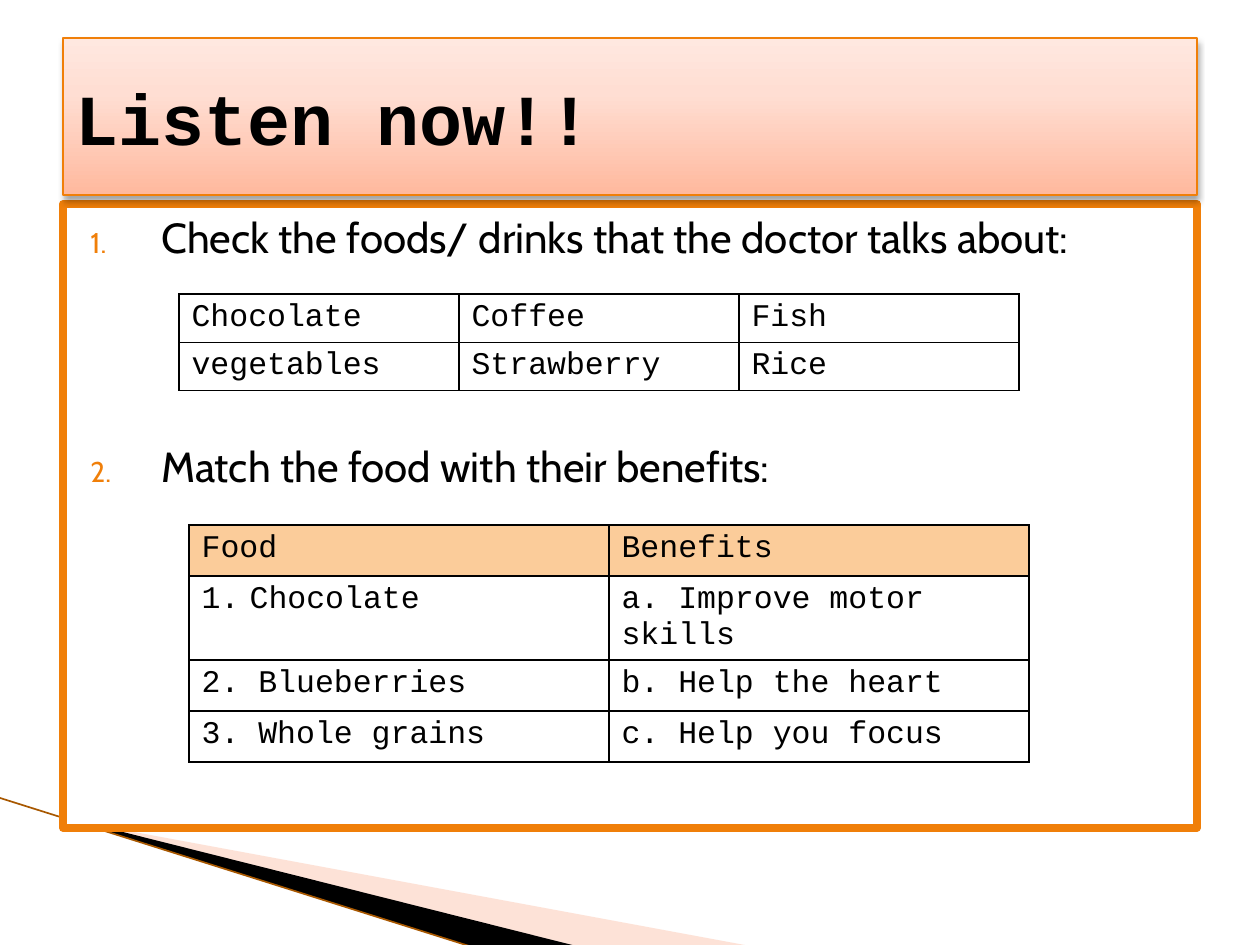
from lxml import etree
from pptx import Presentation
from pptx.dml.color import RGBColor
from pptx.enum.shapes import MSO_CONNECTOR, MSO_SHAPE
from pptx.enum.text import MSO_ANCHOR, PP_ALIGN
from pptx.oxml import parse_xml
from pptx.oxml.ns import nsdecls, qn
from pptx.util import Pt

PX = 914400 // 126  # EMU in one px
BLACK = RGBColor(0x00, 0x00, 0x00)
WHITE = RGBColor(0xFF, 0xFF, 0xFF)
ORANGE = RGBColor(0xF0, 0x7F, 0x09)
BROWN = RGBColor(0xA8, 0x58, 0x00)
PEACH = RGBColor(0xFC, 0xB7, 0x9B)
HEADER = RGBColor(0xFB, 0xCC, 0x9A)
GRADIENT = [(0, "FFB99E"), (65, "FFDED3"), (100, "FFE8E0")]

# Content
TITLE = "Listen now!!"
TASKS = [  # text, space before in points
    ("Check the foods/ drinks that the doctor talks about:", 0),
    ("Match the food with their benefits:", 102),
]
TABLES = [
    {"box": (179, 294, 840, 96), "header": False, "rows": [
        ["Chocolate", "Coffee", "Fish"],
        ["vegetables", "Strawberry", "Rice"]]},
    {"box": (189, 525, 840, 204), "header": True, "rows": [
        ["Food", "Benefits"],
        ["Chocolate", "a. Improve motor skills"],
        ["2. Blueberries", "b. Help the heart"],
        ["3. Whole grains", "c. Help you focus"]]},
]
NUMBERED_CELL = (1, 0)  # in the table with a header
WEDGES = [  # colour, opacity in percent, corners
    (PEACH, 40, [(69, 820), (750, 946), (575, 946), (69, 819)]),
    (BLACK, 100, [(67, 818), (576, 946), (469, 946), (68, 819)]),
]
EDGE = (0, 798, 469, 946)

TITLE_FONT = {"name": "Courier New", "size": Pt(41), "bold": True}
TASK_FONT = {"name": "Cabin", "size": Pt(24)}
CELL_FONT = {"name": "Courier New", "size": Pt(18)}


def px(*values):
    return [value * PX for value in values]


def write(paragraph, text, font):
    run = paragraph.add_run()
    run.text = text
    for name, value in font.items():
        setattr(run.font, name, value)
    run.font.color.rgb = BLACK


def number(paragraph, left, hanging, extras=""):
    properties = paragraph._p.get_or_add_pPr()
    properties.set("marL", str(left * PX))
    properties.set("indent", str(-hanging * PX))
    bullet = parse_xml(f'<a:pPr {nsdecls("a")}>{extras}'
                       '<a:buAutoNum type="arabicPeriod"/></a:pPr>')
    properties.extend(list(bullet))


def add_panel(slide, box, line_width, anchor):
    panel = slide.shapes.add_shape(MSO_SHAPE.RECTANGLE, *px(*box))
    panel.shadow.inherit = False
    panel.line.color.rgb = ORANGE
    panel.line.width = Pt(line_width)
    panel.text_frame.word_wrap = True
    panel.text_frame.vertical_anchor = anchor
    return panel


def add_wedge(slide, color, opacity, corners):
    builder = slide.shapes.build_freeform(*corners[0], scale=PX)
    builder.add_line_segments(corners[1:], close=True)
    wedge = builder.convert_to_shape()
    wedge.shadow.inherit = False
    wedge.line.fill.background()
    wedge.fill.solid()
    wedge.fill.fore_color.rgb = color
    if opacity < 100:
        srgb = wedge._element.spPr.find(".//" + qn("a:srgbClr"))
        etree.SubElement(srgb, qn("a:alpha")).set("val", str(opacity * 1000))


def add_table(slide, box, header, rows):
    row_count, column_count = len(rows), len(rows[0])
    table = slide.shapes.add_table(row_count, column_count, *px(*box)).table
    table.first_row = header
    table.horz_banding = False
    for r, row in enumerate(rows):
        for c, text in enumerate(row):
            cell = table.cell(r, c)
            cell_properties = cell._tc.get_or_add_tcPr()
            for side in "LRTB":
                cell_properties.append(parse_xml(
                    f'<a:ln{side} {nsdecls("a")} w="12700"><a:solidFill>'
                    f'<a:srgbClr val="{BLACK}"/></a:solidFill></a:ln{side}>'))
            if header and r == 0:
                cell.fill.solid()
                cell.fill.fore_color.rgb = HEADER
            else:
                cell.fill.background()
            paragraph = cell.text_frame.paragraphs[0]
            if header and (r, c) == NUMBERED_CELL:
                number(paragraph, 48, 48)
            write(paragraph, text, CELL_FONT)


presentation = Presentation()
presentation.slide_width, presentation.slide_height = px(1260, 945)
slide = presentation.slides.add_slide(presentation.slide_layouts[6])

# Corner decoration
for wedge in WEDGES:
    add_wedge(slide, *wedge)
edge = slide.shapes.add_connector(MSO_CONNECTOR.STRAIGHT, *px(*EDGE))
edge.line.color.rgb = BROWN
edge.line.width = Pt(0.95)
etree.SubElement(edge._element.spPr, qn("a:effectLst"))

# Task panel
body = add_panel(slide, (63, 204, 1134, 624), 4.33, MSO_ANCHOR.TOP)
body.fill.solid()
body.fill.fore_color.rgb = WHITE
body.line._get_or_add_ln().append(parse_xml(f'<a:round {nsdecls("a")}/>'))
body.text_frame.margin_top = 8 * PX
for index, (text, gap) in enumerate(TASKS):
    frame = body.text_frame
    paragraph = frame.add_paragraph() if index else frame.paragraphs[0]
    number(paragraph, 86, 71,
           f'<a:buClr><a:srgbClr val="{ORANGE}"/></a:buClr>'
           '<a:buSzPct val="68000"/><a:buFont typeface="Cabin"/>')
    paragraph.alignment = PP_ALIGN.LEFT
    paragraph.space_before = Pt(gap)
    write(paragraph, text, TASK_FONT)

# Title banner with gradient and soft shadow
banner = add_panel(slide, (63, 38, 1134, 157), 0.75, MSO_ANCHOR.MIDDLE)
stops = "".join(f'<a:gs pos="{position * 1000}"><a:srgbClr val="{color}"/></a:gs>'
                for position, color in GRADIENT)
banner_properties = banner._element.spPr
banner_properties.find(qn("a:prstGeom")).addnext(parse_xml(
    f'<a:gradFill {nsdecls("a")} rotWithShape="1"><a:gsLst>{stops}</a:gsLst>'
    '<a:lin ang="16200000" scaled="0"/></a:gradFill>'))
banner_properties.find(qn("a:effectLst")).append(parse_xml(
    f'<a:outerShdw {nsdecls("a")} blurRad="{Pt(4)}" dist="{Pt(3)}" dir="5400000" '
    f'rotWithShape="0"><a:srgbClr val="{BLACK}"><a:alpha val="35000"/></a:srgbClr>'
    '</a:outerShdw>'))
paragraph = banner.text_frame.paragraphs[0]
paragraph.alignment = PP_ALIGN.LEFT
write(paragraph, TITLE, TITLE_FONT)

# Word tables
for table in TABLES:
    add_table(slide, **table)

presentation.save("out.pptx")
